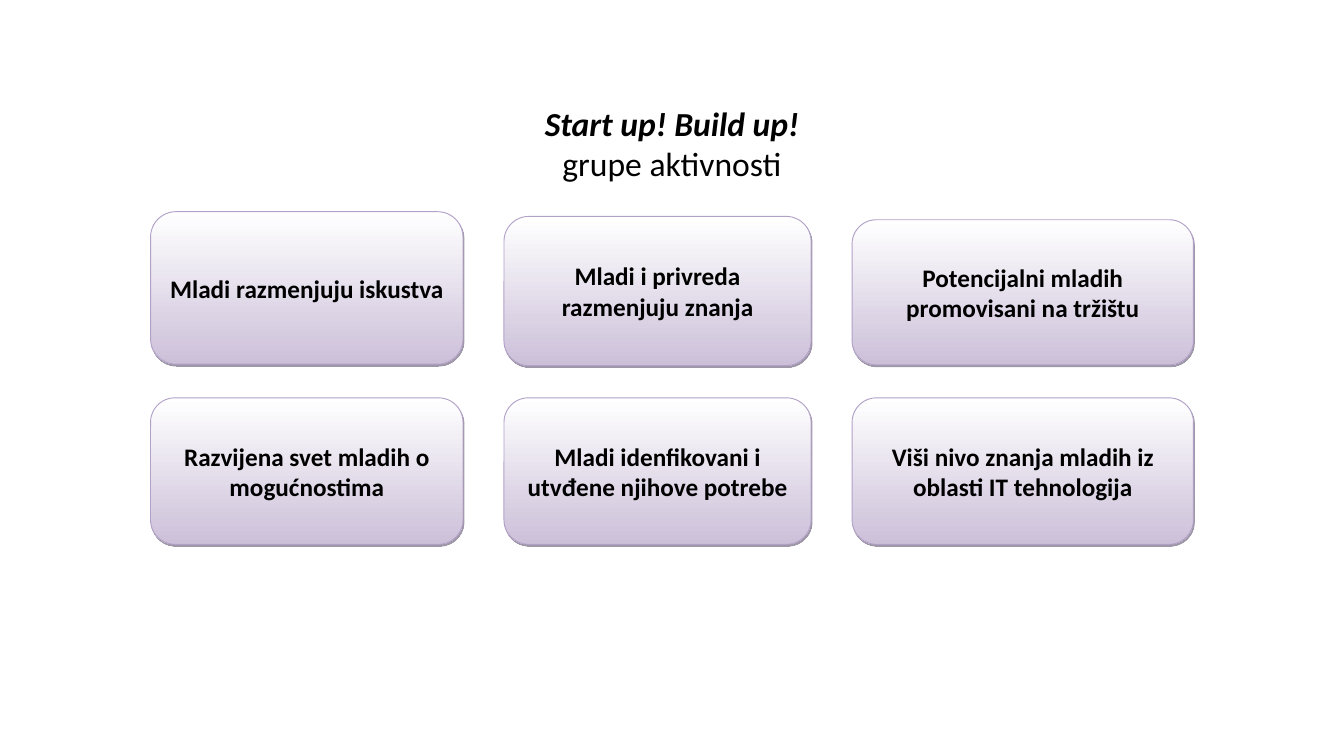
from lxml.etree import SubElement
from pptx import Presentation
from pptx.dml.color import RGBColor
from pptx.enum.shapes import MSO_SHAPE
from pptx.enum.text import MSO_ANCHOR, MSO_AUTO_SIZE, PP_ALIGN
from pptx.oxml.ns import qn
from pptx.util import Inches, Pt

FONT = "Calibri"
BLACK = "000000"
COLUMNS = [(2.24, 4.65), (7.5, 4.57), (12.68, 5.08)]  # left, width
LOWER_TOP, LOWER_HEIGHT = 5.92, 2.18
# text, top, height
UPPER_ROW = [
    ("Mladi razmenjuju iskustva", 3.15, 2.27),
    ("Mladi i privreda razmenjuju znanja", 3.22, 2.22),
    ("Potencijalni mladih promovisani na tržištu", 3.27, 2.16),
]
LOWER_ROW = [
    (text, LOWER_TOP, LOWER_HEIGHT)
    for text in (
        "Razvijena svet mladih o mogućnostima",
        "Mladi idenfikovani i utvđene njihove potrebe",
        "Viši nivo znanja mladih iz oblasti IT tehnologija",
    )
]


def color(hex_value):
    return RGBColor.from_string(hex_value)


def format_paragraph(paragraph, size, bold=False, italic=False):
    paragraph.alignment = PP_ALIGN.CENTER
    font = paragraph.font
    font.name, font.size = FONT, Pt(size)
    font.bold, font.italic = bold, italic
    font.color.rgb = color(BLACK)


def add_shadow(shape):
    """Give the shape a hard, half-transparent shadow below and to the right."""
    shape.shadow.inherit = False
    effects = shape._element.spPr.find(qn("a:effectLst"))
    shadow = SubElement(effects, qn("a:outerShdw"), blurRad="0",
                        dist=str(Pt(2.2)), dir=str(63 * 60000),
                        algn="ctr", rotWithShape="0")
    shade = SubElement(shadow, qn("a:srgbClr"), val="3F3151")
    SubElement(shade, qn("a:alpha"), val="50000")


def set_title(slide):
    title = slide.shapes.title
    title.left, title.top = Inches(0), Inches(1.48)
    title.width, title.height = Inches(20), Inches(1.31)
    frame = title.text_frame
    frame.word_wrap = True
    frame.auto_size = MSO_AUTO_SIZE.SHAPE_TO_FIT_TEXT
    frame.vertical_anchor = MSO_ANCHOR.TOP
    frame.text = "Start up! Build up!\ngrupe aktivnosti"
    project, subject = frame.paragraphs
    format_paragraph(project, 36, bold=True, italic=True)
    format_paragraph(subject, 36)


def add_activity(slide, text, left, top, width, height):
    card = slide.shapes.add_shape(
        MSO_SHAPE.ROUNDED_RECTANGLE,
        Inches(left), Inches(top), Inches(width), Inches(height))
    card.fill.gradient()
    card.fill.gradient_angle = 270
    for stop, shade in zip(card.fill.gradient_stops, ("FFFFFF", "CCC0D9")):
        stop.color.rgb = color(shade)
    card.line.color.rgb = color("B2A1C7")
    card.line.width = Pt(1)
    add_shadow(card)
    frame = card.text_frame
    frame.word_wrap = True
    frame.vertical_anchor = MSO_ANCHOR.MIDDLE
    frame.text = text
    format_paragraph(frame.paragraphs[0], 27, bold=True)


def main():
    deck = Presentation()
    deck.slide_width, deck.slide_height = Inches(20), Inches(11.25)
    slide = deck.slides.add_slide(deck.slide_layouts[5])
    set_title(slide)
    for row in (UPPER_ROW, LOWER_ROW):
        for (text, top, height), (left, width) in zip(row, COLUMNS):
            add_activity(slide, text, left, top, width, height)
    deck.save("out.pptx")


if __name__ == "__main__":
    main()
